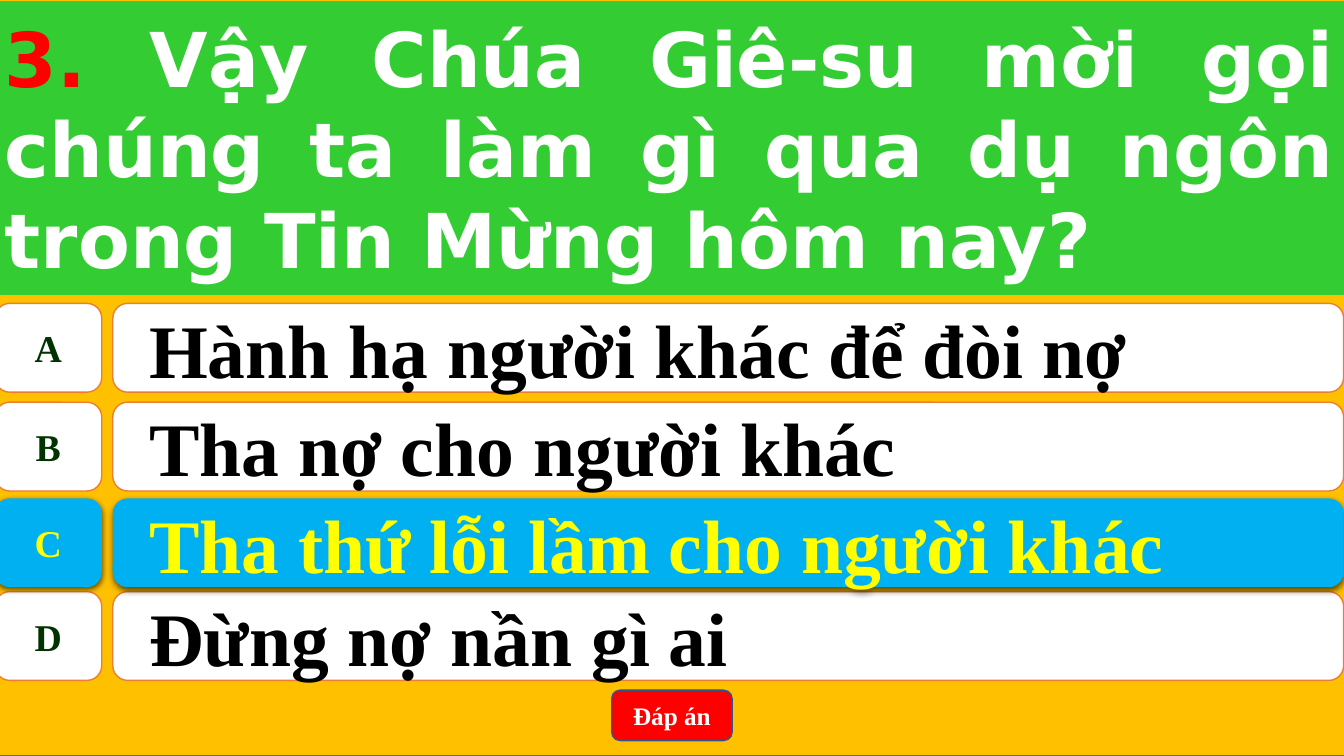
from dataclasses import dataclass

import pptx
import pptx.dml.color
import pptx.enum.shapes
import pptx.enum.text
import pptx.oxml
import pptx.oxml.ns
import pptx.util
from pptx.dml.color import RGBColor
from pptx.enum.shapes import MSO_SHAPE
from pptx.enum.text import PP_ALIGN

AMBER = RGBColor(0xFF, 0xC0, 0x00)
GREEN = RGBColor(0x33, 0xCC, 0x33)
DARK_GREEN = RGBColor(0x00, 0x33, 0x00)
RED = RGBColor(0xFF, 0x00, 0x00)
SKY = RGBColor(0x00, 0xB0, 0xF0)
YELLOW = RGBColor(0xFF, 0xFF, 0x00)
WHITE = RGBColor(0xFF, 0xFF, 0xFF)
BLACK = RGBColor(0x00, 0x00, 0x00)
ORANGE = RGBColor(0xED, 0x7D, 0x31)
STEEL = RGBColor(0x43, 0x73, 0x9E)
NAVY = RGBColor(0x32, 0x54, 0x91)

SERIF = "Times New Roman"
SANS = "DejaVu Sans"
LEFT, FULL_WIDTH = -3.6, 964
ROW_HEIGHT = 63.4


@dataclass
class Box:
    left: float
    top: float
    width: float
    height: float
    preset: MSO_SHAPE
    fill: RGBColor
    line: RGBColor | None = None
    line_width: float = 1


@dataclass
class Answer:
    letter: str
    text: str
    top: float
    correct: bool = False


ANSWERS = [
    Answer("A", "Hành hạ người khác để đòi nợ", 216.7),
    Answer("B", "Tha nợ cho người khác", 287.3),
    Answer("C", "Tha thứ lỗi lầm cho người khác", 356, correct=True),
    Answer("D", "Đừng nợ nần gì ai", 422.6),
]


def draw_box(slide, box: Box):
    shape = slide.shapes.add_shape(
        box.preset, *(pptx.util.Pt(n) for n in (box.left, box.top, box.width, box.height)))
    shape.shadow.inherit = False
    shape.fill.solid()
    shape.fill.fore_color.rgb = box.fill
    if box.line is None:
        shape.line.fill.background()
    else:
        shape.line.color.rgb = box.line
        shape.line.width = pptx.util.Pt(box.line_width)
    shape.text_frame.vertical_anchor = pptx.enum.text.MSO_ANCHOR.MIDDLE
    return shape


def write(shape, text: str, size: float, color: RGBColor, align: PP_ALIGN, font: str = SERIF):
    paragraph = shape.text_frame.paragraphs[0]
    paragraph.alignment = align
    paragraph.font.name = font
    paragraph.font.size = pptx.util.Pt(size)
    paragraph.font.bold = True
    paragraph.font.color.rgb = color
    paragraph.add_run().text = text
    return paragraph


def add_drop_shadow(shape) -> None:
    effects = shape._element.spPr.find(pptx.oxml.ns.qn("a:effectLst"))
    effects.append(pptx.oxml.parse_xml(
        f'<a:outerShdw {pptx.oxml.ns.nsdecls("a")} blurRad="{pptx.util.Pt(4.5)}" '
        f'dist="{pptx.util.Pt(1.5)}" dir="5400000" rotWithShape="0">'
        '<a:srgbClr val="000000"><a:alpha val="63000"/></a:srgbClr></a:outerShdw>'))


def draw_answer(slide, answer: Answer) -> None:
    fill, line = (SKY, None) if answer.correct else (WHITE, ORANGE)
    letter_color, text_color = (YELLOW, YELLOW) if answer.correct else (DARK_GREEN, BLACK)

    tag = draw_box(slide, Box(LEFT, answer.top, 76.3, ROW_HEIGHT,
                              MSO_SHAPE.FLOWCHART_ALTERNATE_PROCESS, fill, line))
    tag.text_frame.word_wrap = False
    write(tag, answer.letter, 27, letter_color, PP_ALIGN.CENTER)

    bar = draw_box(slide, Box(80.6, answer.top, 879.2, ROW_HEIGHT,
                              MSO_SHAPE.ROUNDED_RECTANGLE, fill, line))
    bar.text_frame.word_wrap = True
    paragraph = write(bar, answer.text, 54, text_color, PP_ALIGN.LEFT)
    paragraph.level = 1
    properties = paragraph._p.get_or_add_pPr()
    properties.set("marL", str(pptx.util.Pt(36)))
    properties.set("indent", str(pptx.util.Pt(-20.2)))

    if answer.correct:
        add_drop_shadow(tag)
        add_drop_shadow(bar)


def main() -> None:
    deck = pptx.Presentation()
    deck.slide_width, deck.slide_height = pptx.util.Pt(960), pptx.util.Pt(540)
    slide = deck.slides.add_slide(deck.slide_layouts[6])

    # Backdrop
    draw_box(slide, Box(LEFT, 0, FULL_WIDTH, 540, MSO_SHAPE.RECTANGLE, AMBER, STEEL))

    # Answer button
    button = draw_box(slide, Box(437, 493, 86, 36, MSO_SHAPE.ROUNDED_RECTANGLE, RED, NAVY))
    write(button, "Đáp án", 18, WHITE, PP_ALIGN.CENTER)

    # Answers, the correct one last so that its shadow lies on top
    for answer in sorted(ANSWERS, key=lambda item: item.correct):
        draw_answer(slide, answer)

    # Question
    question = draw_box(slide, Box(LEFT, 0, FULL_WIDTH, 211, MSO_SHAPE.RECTANGLE,
                                   GREEN, AMBER, 0.5))
    question.text_frame.word_wrap = True
    paragraph = write(question, "3. ", 54, WHITE, PP_ALIGN.JUSTIFY, SANS)
    paragraph.runs[0].font.color.rgb = RED
    paragraph.add_run().text = (
        "Vậy Chúa Giê-su mời gọi chúng ta làm gì qua dụ ngôn trong Tin Mừng hôm nay?")

    deck.save("out.pptx")


if __name__ == "__main__":
    main()
